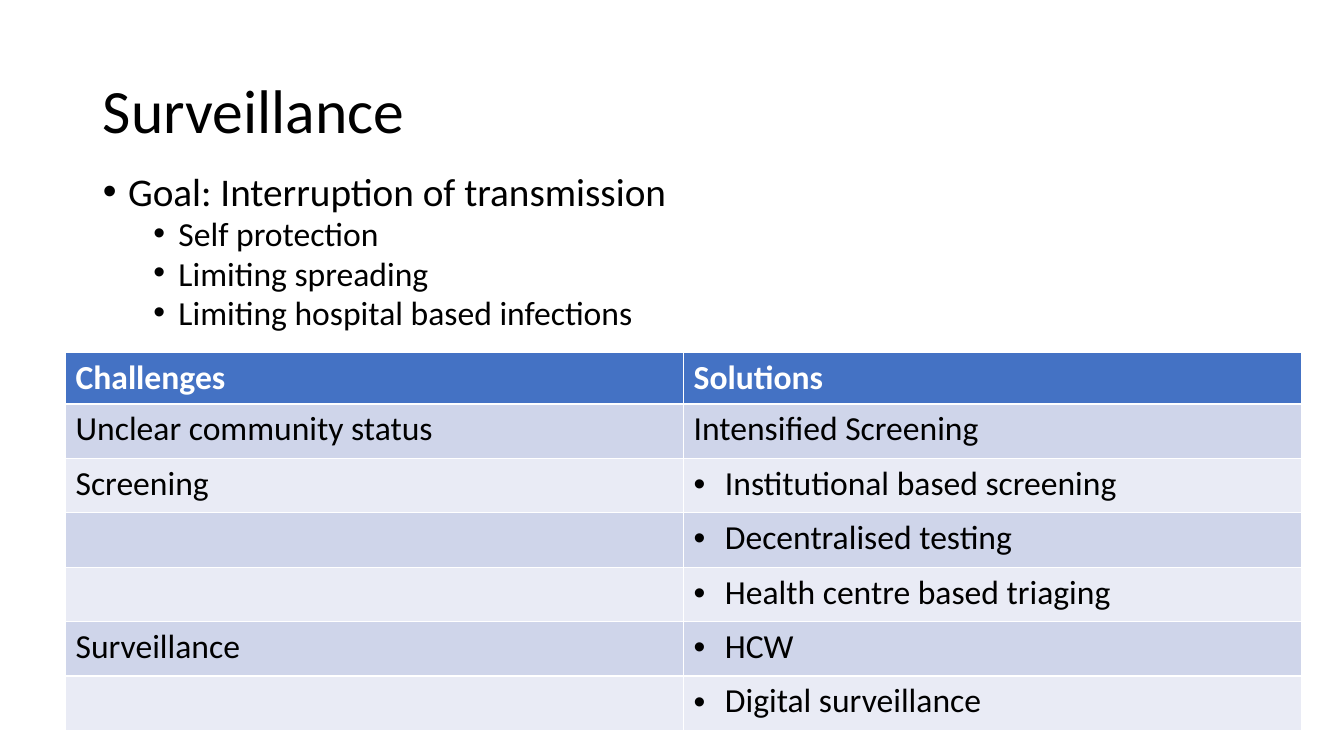
from lxml.etree import SubElement
from pptx import Presentation
from pptx.dml.color import RGBColor
from pptx.enum.text import MSO_ANCHOR, MSO_AUTO_SIZE, PP_ALIGN
from pptx.oxml.ns import qn
from pptx.util import Inches, Pt


def style(paragraph, size, color="000000", bold=False):
    paragraph.alignment = PP_ALIGN.LEFT
    for run in paragraph.runs:
        run.font.name = "Calibri"
        run.font.size = Pt(size)
        run.font.bold = bold
        run.font.color.rgb = RGBColor.from_string(color)


def add_bullet(paragraph, margin, hanging):
    properties = paragraph._p.get_or_add_pPr()
    properties.set("marL", str(Inches(margin)))
    properties.set("indent", str(-Inches(hanging)))
    SubElement(properties, qn("a:buFont")).set("typeface", "Arial")
    SubElement(properties, qn("a:buChar")).set("char", "•")


deck = Presentation()
deck.slide_width = Inches(13.33)
deck.slide_height = Inches(7.5)
slide = deck.slides.add_slide(deck.slide_layouts[1])

title = slide.shapes.title
title.left, title.top = Inches(0.92), Inches(0.4)
title.width, title.height = Inches(11.5), Inches(1.45)
title.text_frame.text = "Surveillance"
title.text_frame.auto_size = MSO_AUTO_SIZE.NONE
title.text_frame.vertical_anchor = MSO_ANCHOR.MIDDLE
title.text_frame.paragraphs[0].line_spacing = 0.9
style(title.text_frame.paragraphs[0], 44)

measures = [
    ("Challenges", "Solutions", False),
    ("Unclear community status", "Intensified Screening", False),
    ("Screening", "Institutional based screening", True),
    ("", "Decentralised testing", True),
    ("", "Health centre based triaging", True),
    ("Surveillance", "HCW", True),
    ("", "Digital surveillance", True),
]
table = slide.shapes.add_table(
    len(measures), 2, Inches(0.65), Inches(3.5), Inches(12.27), Inches(3.73)
).table
for column in table.columns:
    column.width = Inches(6.13)

for row, (challenge, solution, bulleted) in enumerate(measures):
    header = row == 0
    table.rows[row].height = Inches(0.44 if header else 0.54)
    band = "4472C4" if header else "CFD5EA" if row % 2 else "E9EBF5"
    for column, wording in enumerate((challenge, solution)):
        cell = table.cell(row, column)
        cell.fill.solid()
        cell.fill.fore_color.rgb = RGBColor.from_string(band)
        cell.text_frame.text = wording
        entry = cell.text_frame.paragraphs[0]
        style(entry, 24, "FFFFFF" if header else "000000", header)
        if bulleted and column == 1:
            add_bullet(entry, 0.31, 0.31)

goals = slide.placeholders[1]
goals.left, goals.top = Inches(0.92), Inches(1.7)
goals.width, goals.height = Inches(11.5), Inches(1.71)
goals.text_frame.text = "\n".join([
    "Goal: Interruption of transmission",
    "Self protection",
    "Limiting spreading",
    "Limiting hospital based infections",
])
goals.text_frame.auto_size = MSO_AUTO_SIZE.NONE
goals.text_frame.vertical_anchor = MSO_ANCHOR.TOP
for position, goal in enumerate(goals.text_frame.paragraphs):
    main_goal = position == 0
    goal.level = 0 if main_goal else 1
    goal.line_spacing = 0.8
    goal.space_before = Pt(10 if main_goal else 5)
    style(goal, 28 if main_goal else 24)
    add_bullet(goal, 0.25 if main_goal else 0.75, 0.25)

deck.save("out.pptx")
